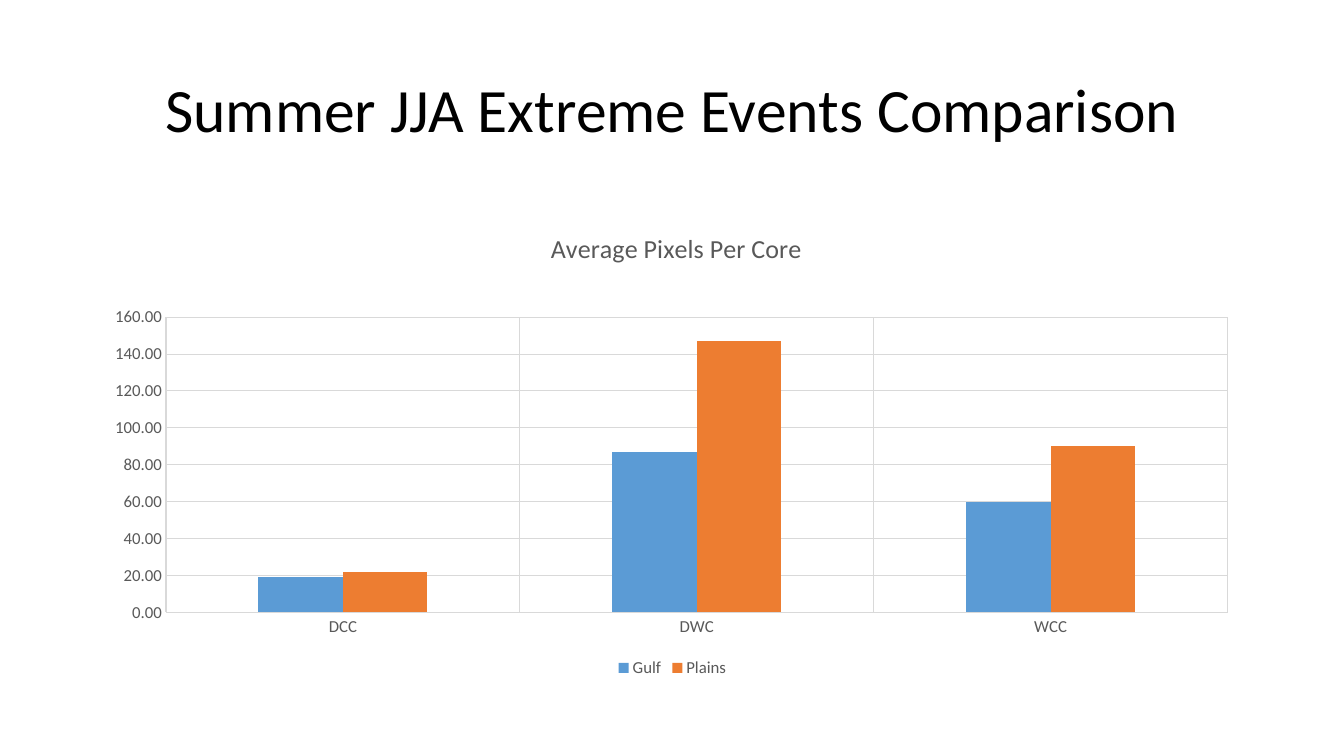
from dataclasses import dataclass

from lxml import etree
from pptx import Presentation
from pptx import util as u
from pptx.chart.data import CategoryChartData
from pptx.dml.color import RGBColor
from pptx.enum import chart as ch
from pptx.enum import text
from pptx.oxml.ns import qn

SCALE = 914400 / 100.8


@dataclass(frozen=True)
class Theme:
    face: str = "Calibri"
    ink: str = "000000"
    grey: str = "595959"
    rule: str = "D9D9D9"
    bars: tuple = ("5B9BD5", "ED7D31")
    head: float = 44
    sub: float = 18.6
    label: float = 12
    line: float = 0.75


THEME = Theme()


def px(*vals):
    return [u.Emu(round(v * SCALE)) for v in vals]


def style(font, size, color):
    font.name = THEME.face
    font.size = u.Pt(size)
    font.bold = False
    font.color.rgb = RGBColor.from_string(color)


def rule(line):
    line.color.rgb = RGBColor.from_string(THEME.rule)
    line.width = u.Pt(THEME.line)


def place(node, box, frame, after=None, inner=False):
    left, top, wide, high = frame
    parts = {"xMode": "edge", "yMode": "edge"}
    if inner:
        parts = {"layoutTarget": "inner", **parts}
    parts["x"] = (box[0] - left) / wide
    parts["y"] = (box[1] - top) / high
    if inner:
        parts["w"] = box[2] / wide
        parts["h"] = box[3] / high
    for old in node.findall(qn("c:layout")):
        node.remove(old)
    layout = etree.Element(qn("c:layout"))
    manual = etree.SubElement(layout, qn("c:manualLayout"))
    for key, val in parts.items():
        show = val if isinstance(val, str) else f"{val:.3f}"
        etree.SubElement(manual, qn("c:" + key)).set("val", show)
    if after is None:
        node.insert(0, layout)
    else:
        after.addnext(layout)


def heading(slide, box, words):
    frame = slide.shapes.add_textbox(*px(*box)).text_frame
    frame.word_wrap = True
    frame.vertical_anchor = text.MSO_ANCHOR.MIDDLE
    para = frame.paragraphs[0]
    para.text = words
    para.alignment = text.PP_ALIGN.CENTER
    para.line_spacing = 0.9
    style(para.font, THEME.head, THEME.ink)


def columns(slide, box, title, cats, rows):
    data = CategoryChartData(number_format="0.00")
    data.categories = cats
    for name, vals in rows.items():
        data.add_series(name, vals)
    kind = ch.XL_CHART_TYPE.COLUMN_CLUSTERED
    chart = slide.shapes.add_chart(kind, *px(*box), data).chart
    style(chart.font, THEME.label, THEME.grey)

    para = chart.chart_title.text_frame.paragraphs[0]
    para.text = title
    style(para.font, THEME.sub, THEME.grey)
    chart.chart_title.include_in_layout = False

    chart.has_legend = True
    chart.legend.position = ch.XL_LEGEND_POSITION.BOTTOM
    chart.legend.include_in_layout = False
    style(chart.legend.font, THEME.label, THEME.grey)

    for axis in (chart.category_axis, chart.value_axis):
        axis.major_tick_mark = axis.minor_tick_mark = ch.XL_TICK_MARK.NONE
        axis.has_major_gridlines = True
        rule(axis.major_gridlines.format.line)
        style(axis.tick_labels.font, THEME.label, THEME.grey)
    rule(chart.category_axis.format.line)
    scale = chart.value_axis
    scale.format.line.fill.background()
    scale.minimum_scale, scale.maximum_scale, scale.major_unit = 0, 160, 20
    scale.tick_labels.number_format = "0.00"
    scale.tick_labels.number_format_is_linked = False

    plot = chart.plots[0]
    plot.gap_width = 219
    plot.overlap = 0
    plot.vary_by_categories = False
    for row, color in zip(plot.series, THEME.bars):
        row.format.fill.solid()
        row.format.fill.fore_color.rgb = RGBColor.from_string(color)

    left, top, wide, high = box
    area = chart.element.find(".//" + qn("c:plotArea"))
    inner = (left + 73, top + 115, wide - 97, high - 185)
    place(area, inner, box, inner=True)
    name = chart.element.find(".//" + qn("c:title"))
    place(name, (left + 453, top + 23), box, name.find(qn("c:tx")))


def main():
    deck = Presentation()
    deck.slide_width, deck.slide_height = px(1344, 756)
    slide = deck.slides.add_slide(deck.slide_layouts[6])
    heading(slide, (93, 40, 1159, 146), "Summer JJA Extreme Events Comparison")
    columns(slide, (93, 202, 1159, 480), "Average Pixels Per Core",
            ("DCC", "DWC", "WCC"),
            {"Gulf": (19, 87, 60), "Plains": (22, 147, 90)})
    deck.save("out.pptx")


if __name__ == "__main__":
    main()
